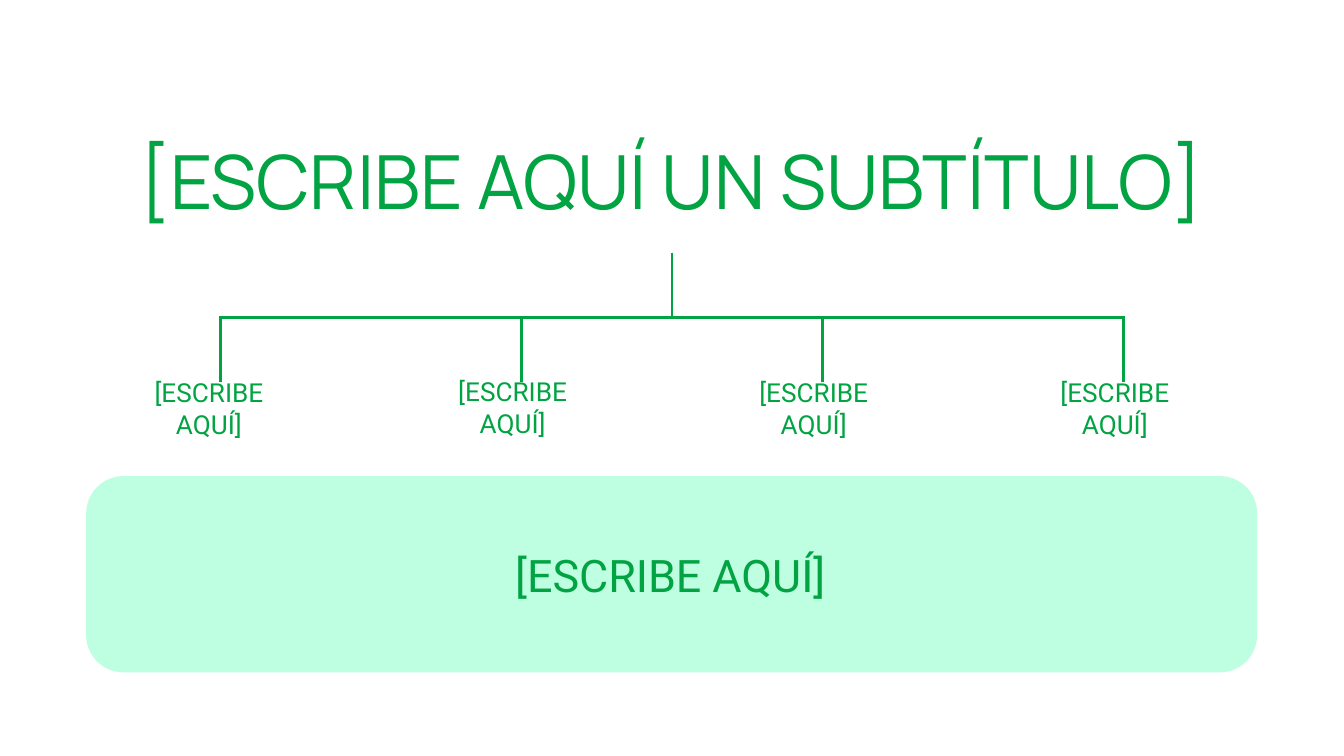
import pptx
import pptx.util
import pptx.dml.color
import pptx.enum.shapes
import pptx.enum.text
from lxml import etree
from pptx.util import Cm, Pt

GREEN, MINT = "01A343", "BEFEE1"
TITLE = "[ESCRIBE AQUÍ UN SUBTÍTULO]"
SUMMARY = "[ESCRIBE AQUÍ]"
# text, left, top (cm)
BRANCHES = [
    ("[ESCRIBE AQUÍ]", 1.98, 6.93),
    ("[ESCRIBE AQUÍ]", 7.72, 6.91),
    ("[ESCRIBE AQUÍ]", 13.41, 6.93),
    ("[ESCRIBE AQUÍ]", 19.1, 6.93),
]
WIDTH, HEIGHT = 25.4, 14.29
TRUNK_X, TRUNK_TOP, DROP = WIDTH / 2, 4.78, 2.44
GAP = 5.69

ANCHOR = pptx.enum.text.MSO_ANCHOR


def rgb(code):
    return pptx.dml.color.RGBColor.from_string(code)


def write(sp, text, size, font, anchor):
    tf = sp.text_frame
    tf.word_wrap = True
    tf.auto_size = pptx.enum.text.MSO_AUTO_SIZE.NONE
    tf.vertical_anchor = anchor
    tf.margin_left = tf.margin_right = Cm(0.3)
    tf.margin_top = tf.margin_bottom = Cm(0.25)
    p = tf.paragraphs[0]
    p.text = text
    p.alignment = pptx.enum.text.PP_ALIGN.CENTER
    p.font.size = Pt(size)
    p.font.name = font
    p.font.color.rgb = rgb(GREEN)


def add_label(s, text, left, top, width, height, size):
    sp = s.shapes.add_textbox(Cm(left), Cm(top), Cm(width), Cm(height))
    write(sp, text, size, "Roboto", ANCHOR.MIDDLE)


def add_branch(s, x):
    """Draw an elbow from the trunk down to x: a sideways elbow turned by 90 degrees."""
    dx = x - TRUNK_X
    cx, cy = TRUNK_X + dx / 2, TRUNK_TOP + DROP / 2
    line = s.shapes.add_connector(
        pptx.enum.shapes.MSO_CONNECTOR.ELBOW,
        Cm(cx - DROP / 2), Cm(cy + dx / 2), Cm(cx + DROP / 2), Cm(cy - dx / 2))
    line.line.color.rgb = rgb(GREEN)
    line.line.width = Pt(1.5)
    sp_pr = line._element.spPr
    sp_pr.find(pptx.oxml.ns.qn("a:xfrm")).set("rot", str(90 * 60000))
    ln = sp_pr.find(pptx.oxml.ns.qn("a:ln"))
    etree.SubElement(ln, pptx.oxml.ns.qn("a:miter"), lim="800000")
    etree.SubElement(sp_pr, pptx.oxml.ns.qn("a:effectLst"))


def main():
    prs = pptx.Presentation()
    prs.slide_width, prs.slide_height = Cm(WIDTH), Cm(HEIGHT)
    s = prs.slides.add_slide(prs.slide_layouts[5])

    title = s.shapes.title
    title.left, title.top, title.width, title.height = Cm(1.98), Cm(2.29), Cm(21.41), Cm(1.6)
    write(title, TITLE, 40, "Manrope", ANCHOR.TOP)

    panel = s.shapes.add_shape(
        pptx.enum.shapes.MSO_SHAPE.ROUNDED_RECTANGLE, Cm(1.63), Cm(9), Cm(22.13), Cm(3.71))
    panel.adjustments[0] = 0.19
    panel.shadow.inherit = False
    panel.fill.solid()
    panel.fill.fore_color.rgb = rgb(MINT)
    panel.line.fill.background()
    add_label(s, SUMMARY, 4.62, 9.78, 16.1, 2.16, 24)

    first_x = TRUNK_X - GAP * (len(BRANCHES) - 1) / 2
    for i, (text, left, top) in enumerate(BRANCHES):
        add_branch(s, first_x + i * GAP)
        add_label(s, text, left, top, 3.94, 1.57, 14)

    prs.save("out.pptx")


if __name__ == "__main__":
    main()
